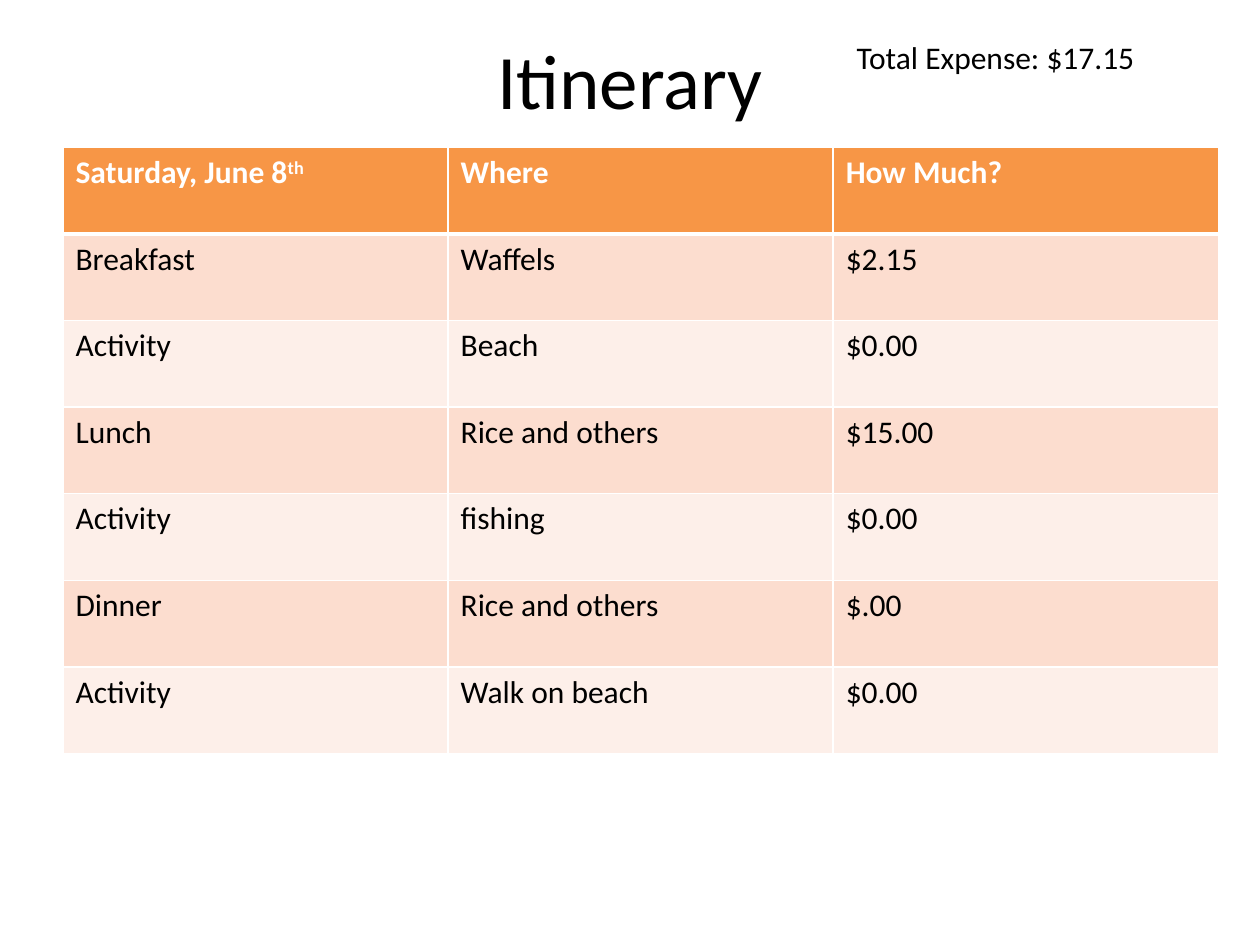
from dataclasses import dataclass

from lxml.etree import SubElement
from pptx import Presentation
from pptx.dml.color import RGBColor
from pptx.enum.text import MSO_ANCHOR, PP_ALIGN
from pptx.oxml.ns import qn
from pptx.util import Inches, Pt


@dataclass(frozen=True)
class Theme:
    font: str = "Calibri"
    title_size: int = 44
    body_size: int = 18
    text: str = "000000"
    white: str = "FFFFFF"
    header: str = "F79646"
    bands: tuple = ("FCDDCF", "FDEFE9")


theme = Theme()


def format_runs(text_frame, size, color, bold=False):
    for paragraph in text_frame.paragraphs:
        for run in paragraph.runs:
            run.font.name = theme.font
            run.font.size = Pt(size)
            run.font.bold = bold
            run.font.color.rgb = RGBColor.from_string(color)


def add_border(cell, side, width):
    properties = cell._tc.get_or_add_tcPr()
    line = SubElement(properties, qn(f"a:{side}"), w=str(Pt(width)))
    fill = SubElement(line, qn("a:solidFill"))
    SubElement(fill, qn("a:srgbClr"), val=theme.white)


itinerary = [
    ("Saturday, June 8", "Where", "How Much?"),
    ("Breakfast", "Waffels", "$2.15"),
    ("Activity", "Beach", "$0.00"),
    ("Lunch", "Rice and others", "$15.00"),
    ("Activity", "fishing", "$0.00"),
    ("Dinner", "Rice and others", "$.00"),
    ("Activity", "Walk on beach", "$0.00"),
]

presentation = Presentation()
presentation.slide_width = Inches(10)
presentation.slide_height = Inches(7.5)
slide = presentation.slides.add_slide(presentation.slide_layouts[5])

title = slide.shapes.title
title.left, title.top = Inches(0.5), Inches(0)
title.width, title.height = Inches(9), Inches(1.25)
title.text_frame.text = "Itinerary"
title.text_frame.vertical_anchor = MSO_ANCHOR.MIDDLE
title.text_frame.paragraphs[0].alignment = PP_ALIGN.CENTER
format_runs(title.text_frame, theme.title_size, theme.text)

total = slide.shapes.add_textbox(Inches(6.7), Inches(0.25), Inches(3.08), Inches(0.4))
total.text_frame.word_wrap = True
total.text_frame.text = "Total Expense: $17.15"
format_runs(total.text_frame, theme.body_size, theme.text)

table = slide.shapes.add_table(
    len(itinerary), len(itinerary[0]),
    Inches(0.5), Inches(1.17), Inches(9.17), Inches(4.81),
).table

for row_index, values in enumerate(itinerary):
    is_header = row_index == 0
    fill_color = theme.header if is_header else theme.bands[(row_index - 1) % 2]
    text_color = theme.white if is_header else theme.text
    for column_index, value in enumerate(values):
        cell = table.cell(row_index, column_index)
        cell.text_frame.text = value
        if is_header and column_index == 0:
            ordinal = cell.text_frame.paragraphs[0].add_run()
            ordinal.text = "th"
            ordinal._r.get_or_add_rPr().set("baseline", "30000")
        format_runs(cell.text_frame, theme.body_size, text_color, is_header)
        for side in ("lnL", "lnR", "lnT", "lnB"):
            beside_header = (row_index, side) in ((0, "lnB"), (1, "lnT"))
            add_border(cell, side, 3 if beside_header else 1)
        cell.fill.solid()
        cell.fill.fore_color.rgb = RGBColor.from_string(fill_color)

presentation.save("out.pptx")
